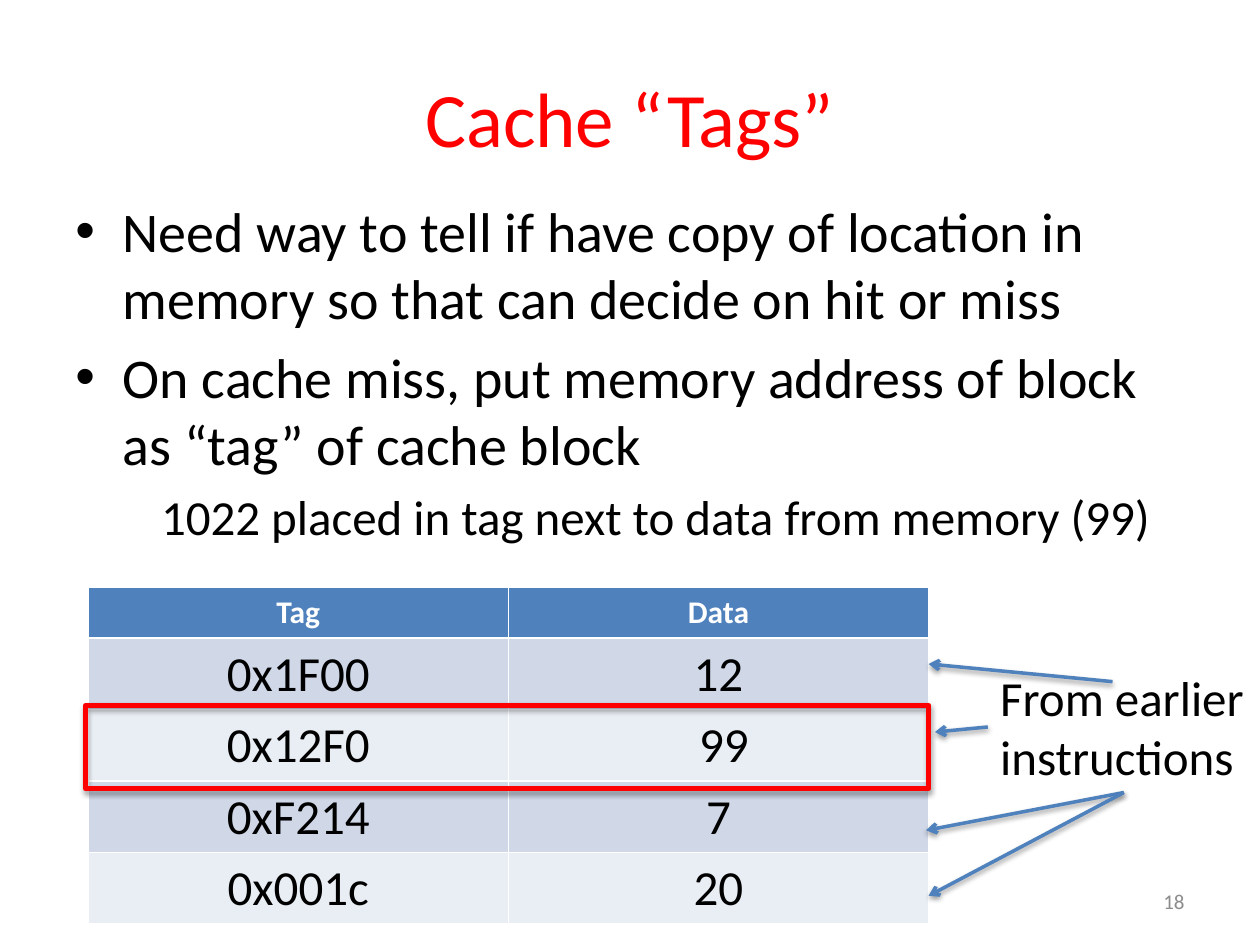
from dataclasses import dataclass

from lxml.etree import SubElement
from pptx import Presentation
from pptx.dml.color import RGBColor
from pptx.enum.shapes import MSO_CONNECTOR, MSO_SHAPE
from pptx.enum.text import MSO_ANCHOR, MSO_AUTO_SIZE, PP_ALIGN
from pptx.oxml.ns import qn
from pptx.util import Emu, Inches, Pt

COLUMNS, ROWS = 100, 75
CELL = Inches(0.1)
FONT = "Calibri"
RED, BLUE, BLACK, WHITE, GREY = "FF0000", "4F81BD", "000000", "FFFFFF", "8C8C8C"
BANDS = ("D0D8E8", "E9EDF4")


@dataclass(frozen=True)
class Area:
    left: float
    top: float
    width: float
    height: float

    def emu(self) -> tuple[Emu, ...]:
        return tuple(map(grid, (self.left, self.top, self.width, self.height)))


@dataclass(frozen=True)
class Point:
    text: str
    size: int = 32
    margin: float = 3.75
    bullet: bool = True


@dataclass(frozen=True)
class Arrow:
    start: tuple[float, float]
    end: tuple[float, float]


POINTS = (
    Point("Need way to tell if have copy of location in memory so that can decide on hit or miss"),
    Point("On cache miss, put memory address of block as “tag” of cache block"),
    Point("1022 placed in tag next to data from memory (99)", 28, 6.8, False),
)
CACHE = (
    ("Tag", "Data"),
    ("0x1F00", "12"),
    ("0x12F0", " 99"),
    ("0xF214", "7"),
    ("0x001c", "20"),
)
BELOW_NOTE = (89.2, 62.9)
ARROWS = (
    Arrow((88.3, 54.1), (73.7, 52.7)),
    Arrow(BELOW_NOTE, (73.5, 65.9)),
    Arrow(BELOW_NOTE, (73.7, 71.1)),
    Arrow((78.4, 57.7), (74.2, 58.1)),
)


def grid(cells: float) -> Emu:
    return Emu(round(cells * CELL))


def colour(value: str) -> RGBColor:
    return RGBColor.from_string(value)


def write(paragraph, text: str, size: int, ink: str = BLACK, bold: bool = False,
          align: PP_ALIGN = PP_ALIGN.LEFT) -> None:
    paragraph.alignment = align
    run = paragraph.add_run()
    run.text = text
    run.font.name, run.font.size, run.font.bold = FONT, Pt(size), bold
    run.font.color.rgb = colour(ink)


def add_text_frame(slide, area: Area):
    frame = slide.shapes.add_textbox(*area.emu()).text_frame
    frame.word_wrap = True
    return frame


def add_shadow(shape, opacity: int, distance: float) -> None:
    effects = SubElement(shape._element.spPr, qn("a:effectLst"))
    shadow = SubElement(effects, qn("a:outerShdw"), blurRad=str(Pt(3.1)),
                        dist=str(Pt(distance)), dir="5400000", rotWithShape="0")
    shade = SubElement(shadow, qn("a:srgbClr"), val=BLACK)
    SubElement(shade, qn("a:alpha"), val=str(opacity * 1000))


def add_title(slide, text: str, area: Area) -> None:
    title = slide.shapes.title
    title.left, title.top, title.width, title.height = area.emu()
    title.text_frame.vertical_anchor = MSO_ANCHOR.MIDDLE
    write(title.text_frame.paragraphs[0], text, 44, RED, align=PP_ALIGN.CENTER)


def add_points(slide, points: tuple[Point, ...], area: Area) -> None:
    frame = add_text_frame(slide, area)
    for index, point in enumerate(points):
        paragraph = frame.add_paragraph() if index else frame.paragraphs[0]
        paragraph.space_before = Pt(point.size * 0.2)
        properties = paragraph._p.get_or_add_pPr()
        properties.set("marL", str(grid(point.margin)))
        if point.bullet:
            properties.set("indent", str(-grid(point.margin)))
            SubElement(properties, qn("a:buFont"), typeface="Arial")
            SubElement(properties, qn("a:buChar"), char="•")
        write(paragraph, point.text, point.size)


def add_cache_table(slide, rows: tuple[tuple[str, str], ...], area: Area) -> None:
    table = slide.shapes.add_table(len(rows), len(rows[0]), *area.emu()).table
    header_height = 4.05
    entry_height = (area.height - header_height) / (len(rows) - 1)
    for r, values in enumerate(rows):
        header = r == 0
        table.rows[r].height = grid(header_height if header else entry_height)
        for c, value in enumerate(values):
            cell = table.cell(r, c)
            cell.fill.solid()
            cell.fill.fore_color.rgb = colour(BLUE if header else BANDS[(r - 1) % 2])
            write(cell.text_frame.paragraphs[0], value, 18 if header else 28,
                  WHITE if header else BLACK, header, PP_ALIGN.CENTER)


def add_highlight(slide, area: Area) -> None:
    frame = slide.shapes.add_shape(MSO_SHAPE.RECTANGLE, *area.emu())
    frame.fill.background()
    frame.line.color.rgb = colour(RED)
    frame.line.width = Pt(3)
    add_shadow(frame, 35, 1.8)


def add_arrow(slide, arrow: Arrow) -> None:
    line = slide.shapes.add_connector(
        MSO_CONNECTOR.STRAIGHT, *map(grid, arrow.start + arrow.end))
    line.line.color.rgb = colour(BLUE)
    line.line.width = Pt(2)
    SubElement(line.line._get_or_add_ln(), qn("a:tailEnd"), type="arrow")
    add_shadow(line, 38, 1.6)


def add_note(slide, lines: tuple[str, ...], area: Area) -> None:
    frame = add_text_frame(slide, area)
    frame.word_wrap = False
    frame.auto_size = MSO_AUTO_SIZE.SHAPE_TO_FIT_TEXT
    for index, text in enumerate(lines):
        write(frame.add_paragraph() if index else frame.paragraphs[0], text, 28)


def add_page_number(slide, number: str, area: Area) -> None:
    frame = add_text_frame(slide, area)
    frame.vertical_anchor = MSO_ANCHOR.MIDDLE
    write(frame.paragraphs[0], number, 12, GREY, align=PP_ALIGN.RIGHT)


def main() -> None:
    """Build the cache tags slide and save it."""
    deck = Presentation()
    deck.slide_width, deck.slide_height = grid(COLUMNS), grid(ROWS)
    slide = deck.slides.add_slide(deck.slide_layouts.get_by_name("Title Only"))
    add_title(slide, "Cache “Tags”", Area(5, 3, 90, 12.5))
    add_points(slide, POINTS, Area(5, 15.1, 90, 30.7))
    add_page_number(slide, "18", Area(71.7, 69.5, 23.3, 4))
    add_cache_table(slide, CACHE, Area(7, 46.6, 66.7, 26.7))
    add_highlight(slide, Area(6.8, 56, 66.9, 6.6))
    add_note(slide, ("From earlier", "instructions"), Area(78.4, 52.5, 21.6, 10.4))
    for arrow in ARROWS:
        add_arrow(slide, arrow)
    deck.save("out.pptx")


if __name__ == "__main__":
    main()
